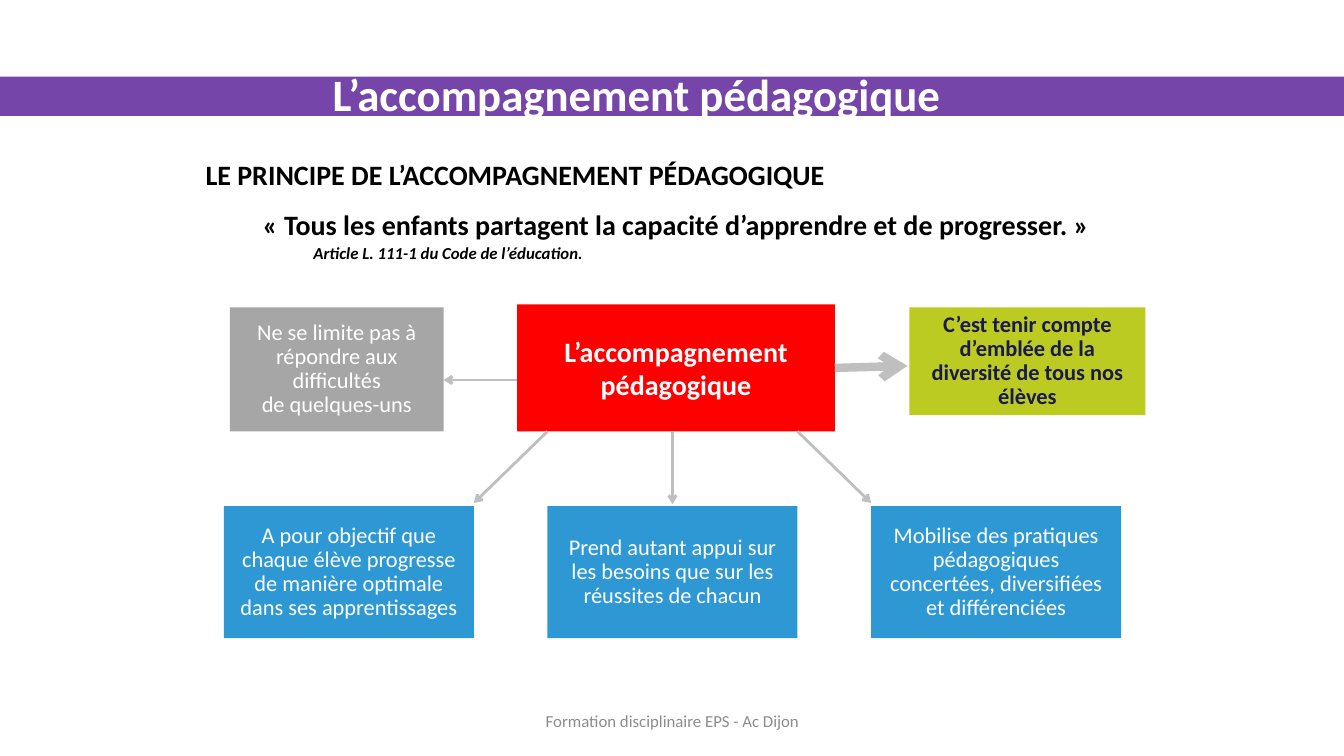
from pptx import Presentation
from pptx.dml.color import RGBColor
from pptx.enum.shapes import MSO_CONNECTOR, MSO_SHAPE
from pptx.enum.text import MSO_ANCHOR, MSO_AUTO_SIZE, PP_ALIGN
from pptx.oxml.ns import qn
from pptx.util import Pt
from lxml.etree import SubElement

PX = 9144
LEFT, MID = PP_ALIGN.LEFT, PP_ALIGN.CENTER


def paint(form, color):
    if hasattr(form, "solid"):
        form.solid()
        form = form.fore_color
    form.rgb = RGBColor.from_string(color)


def write(shape, text, size=16, color="FFFFFF", bold=False, italic=False, align=MID,
          space=0.9, before=0, indent=0, anchor=MSO_ANCHOR.MIDDLE, more=False):
    frame = shape.text_frame
    frame.word_wrap = True
    frame.auto_size = MSO_AUTO_SIZE.NONE
    frame.vertical_anchor = anchor
    for i, line in enumerate(text.split("\n")):
        para = frame.add_paragraph() if more or i else frame.paragraphs[0]
        para.alignment = align
        para.line_spacing = space
        para.space_before = Pt(before)
        para._p.get_or_add_pPr().set("marL", str(indent * PX))
        run = para.add_run()
        run.text = line
        font = run.font
        font.name, font.size = "Calibri", Pt(size)
        font.bold, font.italic = bold, italic
        paint(font.color, color)


deck = Presentation()
deck.slide_width, deck.slide_height = 1333 * PX, 750 * PX
slide = deck.slides.add_slide(deck.slide_layouts[5])
shapes = slide.shapes
title = shapes.title

cards = [
    (0, 76, 1333, 39, "7545A9", "", {}),
    (902, 305, 234, 107, "BCCB21",
     "C’est tenir compte d’emblée de la diversité de tous nos élèves",
     dict(color="1C1850", bold=True)),
    (228, 305, 212, 123, "A6A6A6",
     "Ne se limite pas à\nrépondre aux difficultés\nde quelques-uns", {}),
    (513, 302, 315, 126, "FF0000", "L’accompagnement\npédagogique",
     dict(size=20, bold=True, space=1)),
]
goals = [
    "A pour objectif que chaque élève progresse de manière optimale dans ses apprentissages",
    "Prend autant appui sur les besoins que sur les réussites de chacun",
    "Mobilise des pratiques pédagogiques concertées, diversifiées et différenciées",
]
for i, goal in enumerate(goals):
    cards.append((222 + 321 * i, 502, 248, 131, "2E98D5", goal, {}))

for x, y, w, h, fill, text, style in cards:
    card = shapes.add_shape(MSO_SHAPE.RECTANGLE, x * PX, y * PX, w * PX, h * PX)
    card.shadow.inherit = False
    paint(card.fill, fill)
    card.line.fill.background()
    if text:
        write(card, text, **style)

shapes._spTree.append(title._element)
title.left, title.top, title.width, title.height = 320 * PX, 30 * PX, 947 * PX, 125 * PX
write(title, "L’accompagnement pédagogique", size=32, bold=True, align=LEFT, space=1)

intro = shapes.add_textbox(194 * PX, 155 * PX, 953 * PX, 126 * PX)
lead = dict(color="000000", bold=True, anchor=MSO_ANCHOR.TOP)
write(intro, "LE PRINCIPE DE L’ACCOMPAGNEMENT PÉDAGOGIQUE", size=20, align=LEFT, **lead)
write(intro, "« Tous les enfants partagent la capacité d’apprendre et de progresser. »",
      size=20, before=14.4, more=True, **lead)
write(intro, "Article L. 111-1 du Code de l’éducation.", size=12, italic=True,
      align=LEFT, before=2, indent=107, more=True, **lead)

arrows = [
    (791, 428, 864, 499, 2),
    (543, 428, 470, 499, 2),
    (667, 428, 667, 500, 2),
    (513, 377, 440, 377, 2),
    (828, 365, 900, 363, 6),
]
for x1, y1, x2, y2, width in arrows:
    arrow = shapes.add_connector(MSO_CONNECTOR.STRAIGHT, x1 * PX, y1 * PX, x2 * PX, y2 * PX)
    arrow.line.width = Pt(width)
    paint(arrow.line.fill, "BFBFBF")
    SubElement(arrow.line._get_or_add_ln(), qn("a:tailEnd"), type="arrow")
    SubElement(arrow._element.spPr, qn("a:effectLst"))

foot = shapes.add_textbox(456 * PX, 695 * PX, 422 * PX, 40 * PX)
write(foot, "Formation disciplinaire EPS - Ac Dijon", size=12, color="8C8C8C", space=1)

deck.save("out.pptx")
